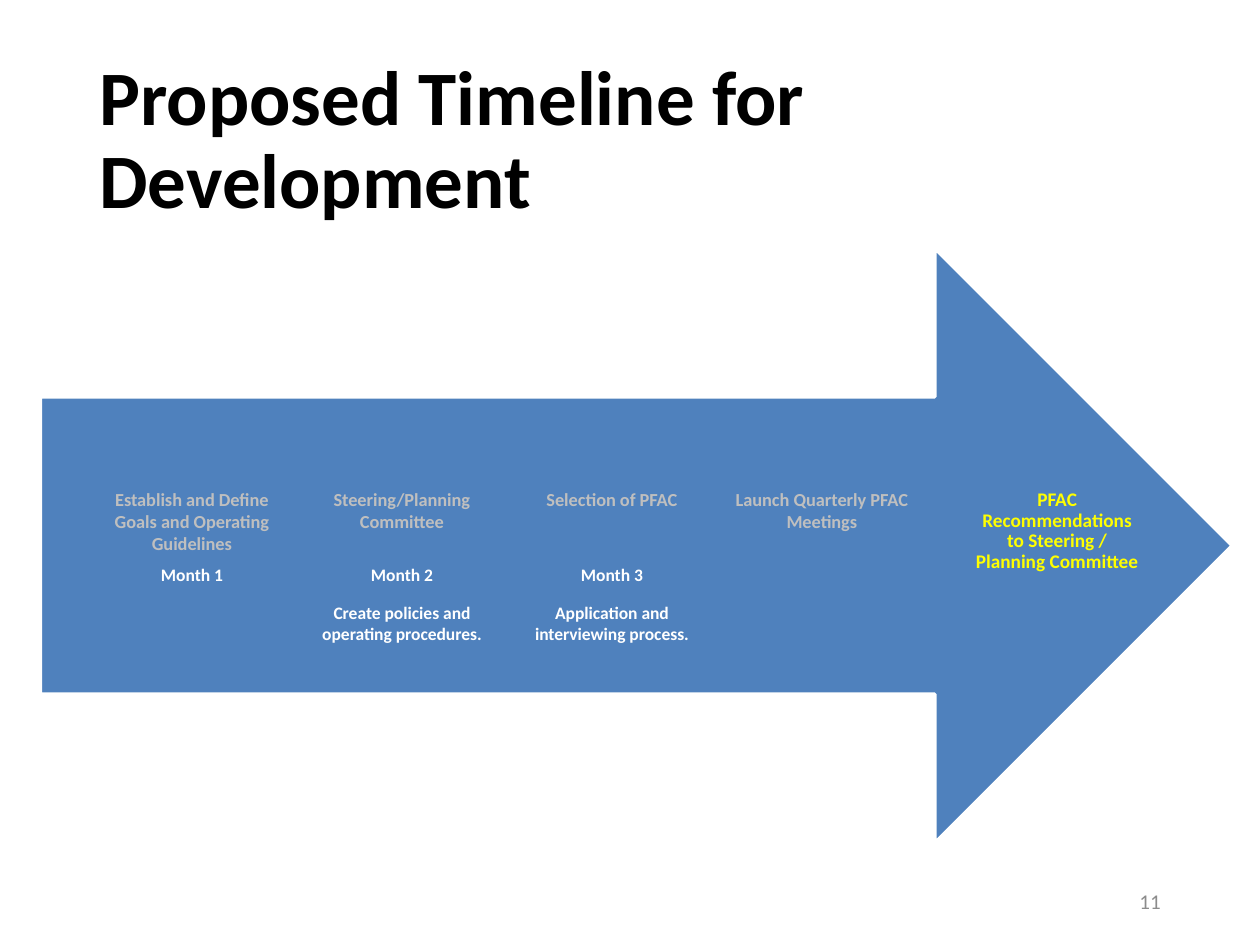
from pptx import Presentation
from pptx import util as u
from pptx.dml.color import RGBColor
from pptx.enum import shapes, text

BLUE = RGBColor(0x4F, 0x81, 0xBD)
WHITE = RGBColor(0xFF, 0xFF, 0xFF)
BLACK = RGBColor(0, 0, 0)
SILVER = RGBColor(0xBF, 0xBF, 0xBF)
GRAY = RGBColor(0x8C, 0x8C, 0x8C)
YELLOW = RGBColor(0xFF, 0xFF, 0)

FONT = "Calibri"
WIDE, HIGH = 10, 7.5
EDGE = 0.69                      # left and right margin
COL = WIDE / 6                   # width of one month column
ROWS = (0.35, 0.3, 0.35)
PLAIN = "{2D5ABB26-0587-4C30-8999-92F81FD0307C}"  # no style, no grid

GOALS = "Establish and Define Goals and Operating Guidelines"
STEPS = (
    (GOALS, "Steering/Planning Committee", "Selection of PFAC",
     "Launch Quarterly PFAC Meetings"),
    ("Month 1", "Month 2", "Month 3", ""),
    ("", "Create policies and operating procedures.",
     "Application and interviewing process.", ""),
)


def box(*lengths):
    return [u.Inches(n) for n in lengths]


def write(frame, words, size, color, align, bold=True, lead=None):
    para = frame.paragraphs[0]
    para.alignment = align
    if lead:
        para.line_spacing = lead
    run = para.add_run()
    run.text = words
    font = run.font
    font.name, font.size, font.bold = FONT, u.Pt(size), bold
    font.color.rgb = color


def label(slide, place, words, size, color, align, pad=(0.1, 0.05), **look):
    frame = slide.shapes.add_textbox(*box(*place)).text_frame
    frame.word_wrap = True
    frame.vertical_anchor = text.MSO_ANCHOR.MIDDLE
    frame.margin_left = frame.margin_right = u.Inches(pad[0])
    frame.margin_top = frame.margin_bottom = u.Inches(pad[1])
    write(frame, words, size, color, align, **look)


def arrow(slide, place):
    shape = slide.shapes.add_shape(
        shapes.MSO_SHAPE.RIGHT_ARROW, *box(*place))
    shape.shadow.inherit = False
    shape.fill.solid()
    shape.fill.fore_color.rgb = BLUE
    shape.line.color.rgb = WHITE
    shape.line.width = u.Pt(2)


def months(slide, left, top):
    count = len(STEPS[0])
    frame = slide.shapes.add_table(
        len(ROWS), count, *box(left, top, COL * count, sum(ROWS)))
    table = frame.table
    table.first_row = table.horz_banding = False
    table._tbl.tblPr.find("{*}tableStyleId").text = PLAIN
    for col in table.columns:
        col.width = u.Inches(COL)
    for r, (high, line) in enumerate(zip(ROWS, STEPS)):
        table.rows[r].height = u.Inches(high)
        size, color = (10, WHITE) if r else (10.5, SILVER)
        for c, words in enumerate(line):
            cell = table.cell(r, c)
            cell.fill.background()
            cell.margin_left = cell.margin_right = u.Inches(0.07)
            cell.margin_top = cell.margin_bottom = u.Inches(0.04)
            if words:
                write(cell.text_frame, words, size, color,
                      text.PP_ALIGN.CENTER)
    # The last step spans all rows
    table.cell(0, count - 1).merge(table.cell(len(ROWS) - 1, count - 1))


def main():
    deck = Presentation()
    deck.slide_width, deck.slide_height = box(WIDE, HIGH)
    slide = deck.slides.add_slide(deck.slide_layouts[6])
    align = text.PP_ALIGN

    # Title
    label(slide, (EDGE, 0.4, WIDE - 2 * EDGE, 1.45),
          "Proposed Timeline for Development", 44, BLACK, align.LEFT,
          lead=0.9)

    # Timeline arrow with its steps
    arrow(slide, (0.32, 1.97, 9.46, 4.72))
    months(slide, EDGE, 3.84)

    # Outcome in the arrow head
    label(slide, (7.72, 3.27, 1.34, 1.89),
          "PFAC Recommendations to Steering / Planning Committee",
          11, YELLOW, align.CENTER, pad=(0, 0.12), lead=0.9)

    # Page number
    label(slide, (WIDE - EDGE - 2.25, 6.95, 2.25, 0.4), "11", 12, GRAY,
          align.RIGHT, bold=False)

    deck.save("out.pptx")


if __name__ == "__main__":
    main()
